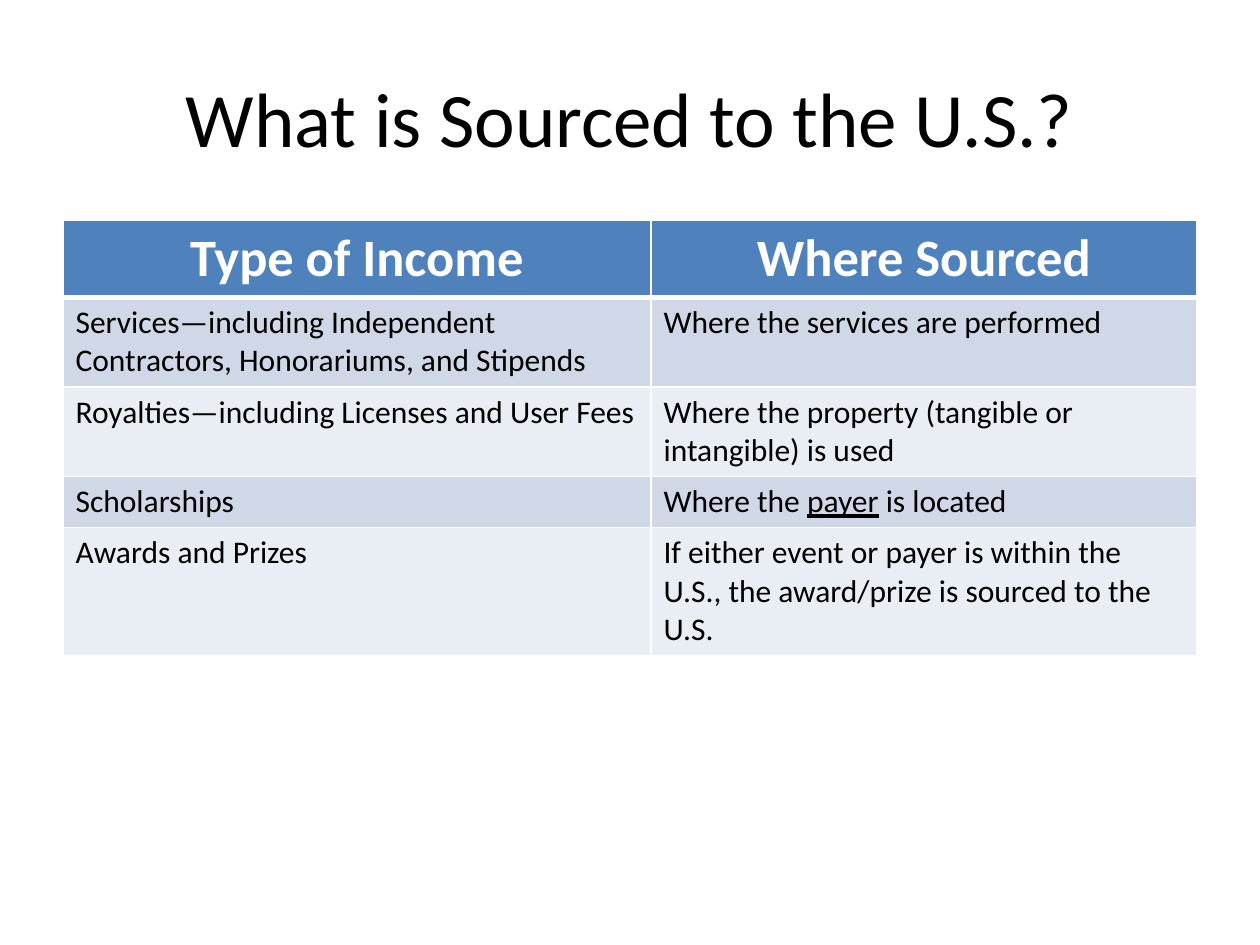
from dataclasses import dataclass

from lxml.etree import SubElement
from pptx import Presentation
from pptx.dml.color import RGBColor
from pptx.enum.text import MSO_ANCHOR as Anchor, PP_ALIGN as Align
from pptx.oxml.ns import qn
from pptx.util import Pt


@dataclass(frozen=True)
class Theme:
    font: str = "Calibri"
    ink: str = "000000"
    paper: str = "FFFFFF"
    header: str = "4F81BD"
    bands: tuple = ("D0D8E8", "E9EDF4")
    title_size: float = 44
    header_size: float = 30
    body_size: float = 18
    rule: float = 1
    header_rule: float = 3


class PageBuilder:
    def __init__(self, page, theme):
        self.page = page
        self.theme = theme

    def add_words(self, para, content, size, color, align=Align.LEFT, bold=False):
        para.alignment = align
        spans = [(content, {})] if isinstance(content, str) else content
        for words, extra in spans:
            span = para.add_run()
            span.text = words
            formats = {"name": self.theme.font, "size": Pt(size), "bold": bold, **extra}
            for name, value in formats.items():
                setattr(span.font, name, value)
            span.font.color.rgb = RGBColor.from_string(color)

    def title(self, words, left, top, width, height):
        box = self.page.shapes.title
        place = {"left": left, "top": top, "width": width, "height": height}
        for name, value in place.items():
            setattr(box, name, Pt(value))
        box.text_frame.vertical_anchor = Anchor.MIDDLE
        self.add_words(box.text_frame.paragraphs[0], words, self.theme.title_size,
                       self.theme.ink, Align.CENTER)

    def border(self, cell, side, width):
        properties = cell._tc.get_or_add_tcPr()
        line = SubElement(properties, qn(f"a:{side}"), w=str(Pt(width)))
        fill = SubElement(line, qn("a:solidFill"))
        SubElement(fill, qn("a:srgbClr"), val=self.theme.paper)

    def cell(self, cell, content, row):
        theme = self.theme
        heading = row == 0
        widths = {"lnL": theme.rule, "lnR": theme.rule,
                  "lnT": theme.header_rule if row == 1 else theme.rule,
                  "lnB": theme.header_rule if heading else theme.rule}
        for side, width in widths.items():
            self.border(cell, side, width)
        color = theme.header if heading else theme.bands[(row - 1) % 2]
        cell.fill.solid()
        cell.fill.fore_color.rgb = RGBColor.from_string(color)
        para = cell.text_frame.paragraphs[0]
        if heading:
            self.add_words(para, content, theme.header_size, theme.paper, Align.CENTER, True)
        else:
            self.add_words(para, content, theme.body_size, theme.ink)

    def table(self, rows, left, top, widths, row_height):
        frame = self.page.shapes.add_table(
            len(rows), len(widths), Pt(left), Pt(top),
            Pt(sum(widths)), Pt(row_height * len(rows)))
        table = frame.table
        for column, width in zip(table.columns, widths):
            column.width = Pt(width)
        for row, contents in enumerate(rows):
            table.rows[row].height = Pt(row_height)
            for column, content in enumerate(contents):
                self.cell(table.cell(row, column), content, row)


INCOME_ROWS = [
    ("Type of Income", "Where Sourced"),
    ("Services—including Independent Contractors, Honorariums, and Stipends",
     "Where the services are performed"),
    ("Royalties—including Licenses and User Fees",
     "Where the property (tangible or intangible) is used"),
    ("Scholarships",
     [("Where the ", {}), ("payer", {"underline": True}), (" is located", {})]),
    ("Awards and Prizes",
     "If either event or payer is within the U.S., the award/prize is sourced to the U.S."),
]


def main():
    deck = Presentation()
    deck.slide_width, deck.slide_height = Pt(720), Pt(540)
    page = deck.slides.add_slide(deck.slide_layouts[5])
    builder = PageBuilder(page, Theme())
    builder.title("What is Sourced to the U.S.?", 36, 21.6, 648, 90)
    builder.table(INCOME_ROWS, 36, 126, (336, 312), 29.2)
    deck.save("out.pptx")


if __name__ == "__main__":
    main()
